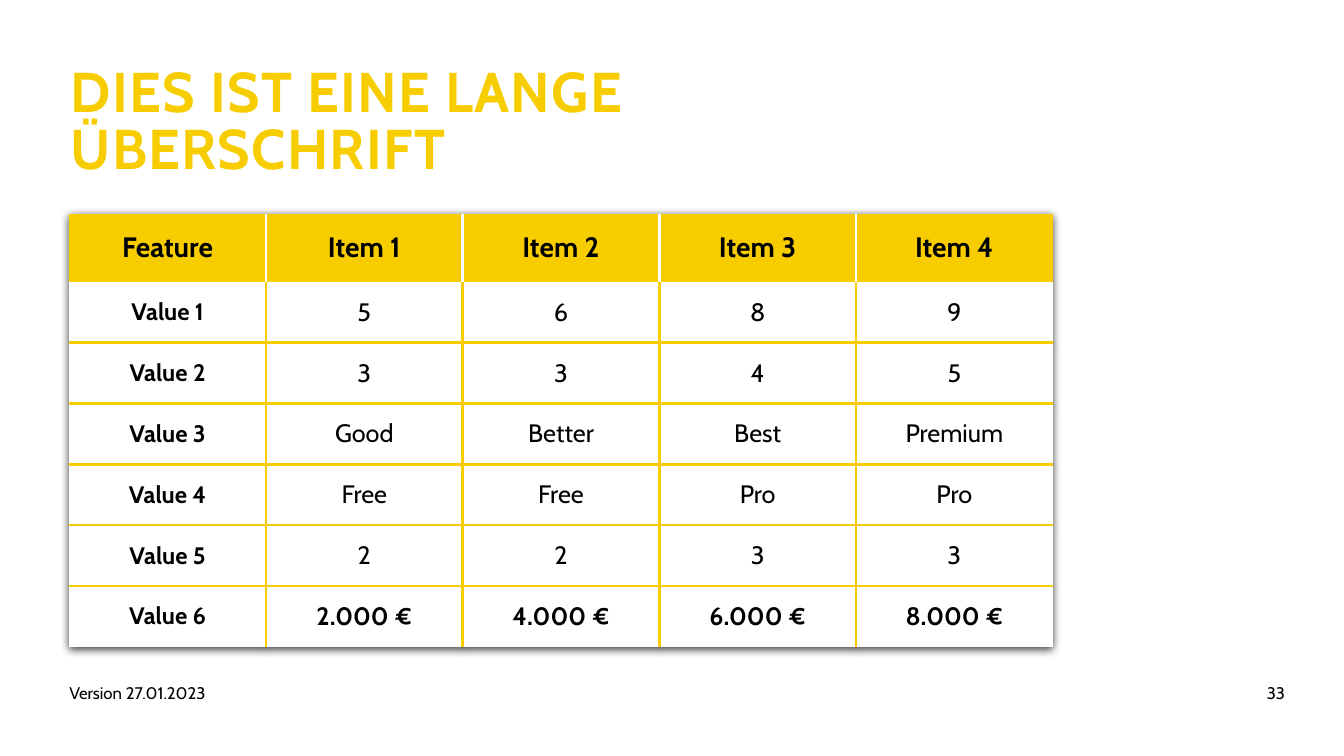
from lxml.etree import SubElement
from pptx import Presentation
from pptx.dml.color import RGBColor
from pptx.enum.text import MSO_ANCHOR as Anchor, MSO_AUTO_SIZE as AutoSize, PP_ALIGN as Align
from pptx.oxml import parse_xml
from pptx.oxml.ns import nsdecls, qn
from pptx.util import Pt

COLORS = {"yellow": "F7CD00", "black": "000000", "white": "FFFFFF"}
FONT = "Cabin"
NO_STYLE = "{2D5ABB26-0587-4C30-8999-92F81FD0307C}"
ROWS = [
    ["Feature", "Item 1", "Item 2", "Item 3", "Item 4"],
    ["Value 1", "5", "6", "8", "9"],
    ["Value 2", "3", "3", "4", "5"],
    ["Value 3", "Good", "Better", "Best", "Premium"],
    ["Value 4", "Free", "Free", "Pro", "Pro"],
    ["Value 5", "2", "2", "3", "3"],
    ["Value 6", "2.000 €", "4.000 €", "6.000 €", "8.000 €"],
]


class SlideBuilder:
    """Holds the slide and its style, and adds each kind of element."""

    def __init__(self, slide):
        """Keep the slide that receives the elements."""
        self.slide = slide

    def style(self, paragraph, size, color="black", bold=False, align=Align.LEFT):
        """Set the font and alignment of a paragraph."""
        paragraph.alignment = align
        font = paragraph.font
        font.name, font.size, font.bold = FONT, Pt(size), bold
        font.color.rgb = RGBColor.from_string(COLORS[color])

    def frame(self, shape, text):
        """Put text in a wrapping frame without margins and return its paragraph."""
        frame = shape.text_frame
        frame.text = text
        frame.word_wrap = True
        frame.auto_size = AutoSize.NONE
        frame.vertical_anchor = Anchor.TOP
        frame.margin_left = frame.margin_right = frame.margin_top = frame.margin_bottom = 0
        return frame.paragraphs[0]

    def title(self, text, left, top, width, height):
        """Place and format the title placeholder."""
        shape = self.slide.shapes.title
        shape.left, shape.top, shape.width, shape.height = map(Pt, (left, top, width, height))
        paragraph = self.frame(shape, text)
        paragraph.line_spacing = 0.85
        self.style(paragraph, 40, "yellow", True)
        paragraph.runs[0].font._element.set("spc", "100")

    def label(self, text, left, top, width, height, align=Align.LEFT):
        """Add a small footer text."""
        shape = self.slide.shapes.add_textbox(*map(Pt, (left, top, width, height)))
        self.style(self.frame(shape, text), 12, align=align)

    def border(self, cell, side, color):
        """Draw one border of a cell."""
        line = SubElement(cell._tc.get_or_add_tcPr(), qn(f"a:ln{side}"), w=str(Pt(2.25)))
        fill = SubElement(line, qn("a:solidFill"))
        SubElement(fill, qn("a:srgbClr"), val=COLORS[color])

    def cell(self, cell, text, row, column, last_row, last_column):
        """Fill and format one cell with its inner borders."""
        header = row == 0
        sides = {
            "L": column > 0,
            "R": column < last_column,
            "T": row > 1,
            "B": 0 < row < last_row,
        }
        for side, visible in sides.items():
            if visible:
                self.border(cell, side, "white" if header else "yellow")
        cell.fill.solid()
        cell.fill.fore_color.rgb = RGBColor.from_string(COLORS["yellow" if header else "white"])
        cell.vertical_anchor = Anchor.MIDDLE
        cell.margin_left = cell.margin_right = Pt(14.4)
        cell.margin_top = cell.margin_bottom = 0
        cell.text = text
        size = 20 if header else 17 if column == 0 else 18
        bold = header or column == 0 or row == last_row
        self.style(cell.text_frame.paragraphs[0], size, bold=bold, align=Align.CENTER)

    def table(self, rows, left, top, column_width, header_height, row_height):
        """Add the shadowed comparison table."""
        count, columns = len(rows), len(rows[0])
        height = header_height + row_height * (count - 1)
        table = self.slide.shapes.add_table(
            count, columns, Pt(left), Pt(top), Pt(column_width * columns), Pt(height)
        ).table
        table.horz_banding = False
        properties = table._tbl.tblPr
        properties.find(qn("a:tableStyleId")).text = NO_STYLE
        properties.insert(0, parse_xml(
            f'<a:effectLst {nsdecls("a")}><a:outerShdw blurRad="{Pt(6)}" dist="{Pt(2)}" '
            f'dir="5400000" algn="ctr" rotWithShape="0"><a:srgbClr val="{COLORS["black"]}">'
            '<a:alpha val="75000"/></a:srgbClr></a:outerShdw></a:effectLst>'
        ))
        for column in table.columns:
            column.width = Pt(column_width)
        for row, texts in enumerate(rows):
            table.rows[row].height = Pt(row_height if row else header_height)
            for column, text in enumerate(texts):
                self.cell(table.cell(row, column), text, row, column, count - 1, columns - 1)


def main():
    """Build and save the presentation."""
    presentation = Presentation()
    presentation.slide_width, presentation.slide_height = Pt(960), Pt(540)
    builder = SlideBuilder(presentation.slides.add_slide(presentation.slide_layouts[5]))
    builder.label("33", 763, 487.5, 155, 29, Align.RIGHT)
    builder.label("Version 27.01.2023", 49.5, 487.5, 592.5, 29)
    builder.title("DIES IST EINE LANGE ÜBERSCHRIFT", 50.5, 47.5, 590.5, 80.5)
    builder.table(ROWS, 49.5, 152.5, 140.5, 49, 43.4)
    presentation.save("out.pptx")


if __name__ == "__main__":
    main()
